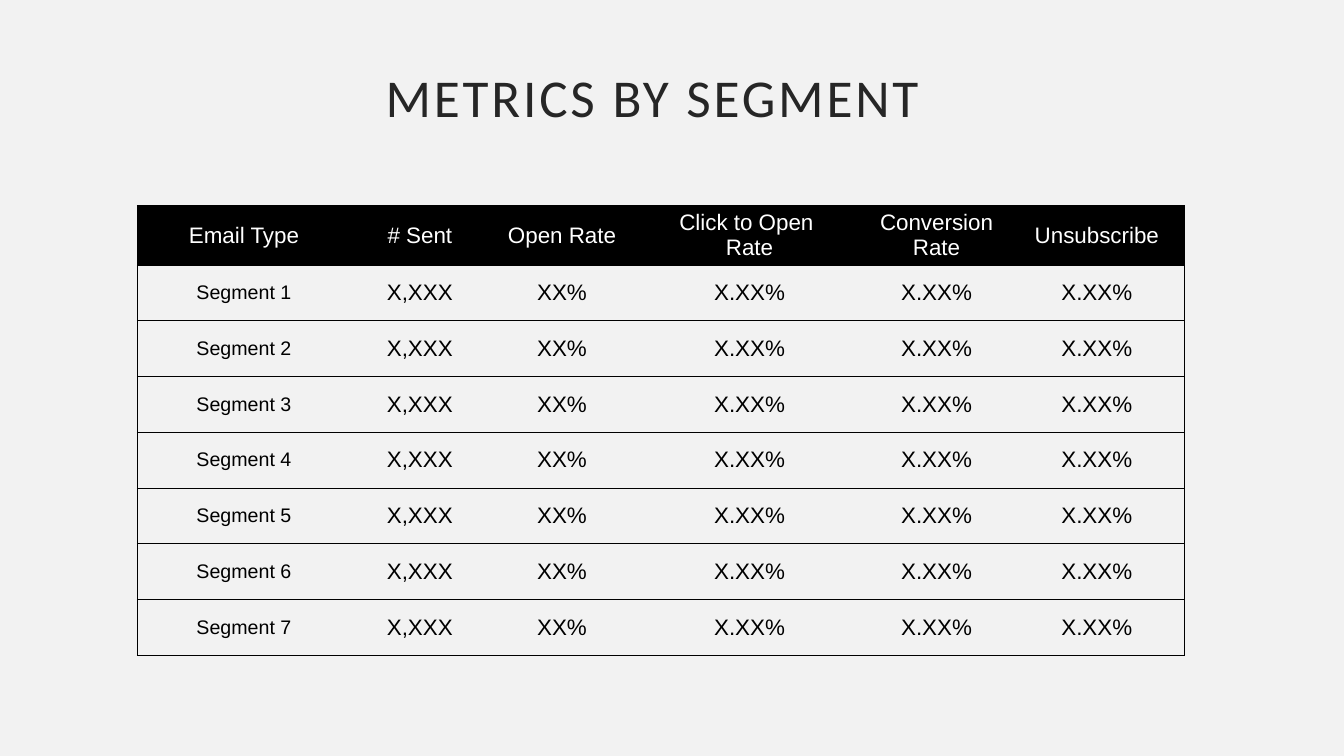
from dataclasses import dataclass

import lxml.etree
import pptx
import pptx.dml.color
import pptx.enum.text
import pptx.oxml.ns
import pptx.table
import pptx.util
from pptx.util import Inches

BACKGROUND = pptx.dml.color.RGBColor(0xF2, 0xF2, 0xF2)
TITLE_COLOR = pptx.dml.color.RGBColor(0x26, 0x26, 0x26)
BLACK = pptx.dml.color.RGBColor(0, 0, 0)
WHITE = pptx.dml.color.RGBColor(0xFF, 0xFF, 0xFF)

SEGMENT_COUNT = 7
TABLE_LEFT, TABLE_TOP = 1.36, 2.04
TABLE_HEIGHT, HEADER_HEIGHT = 4.46, 0.59
BORDER_WIDTH = pptx.util.Pt(0.5)


@dataclass(frozen=True)
class Column:
    heading: str
    value: str
    width: float
    value_size: int = 16


COLUMNS = [
    Column("Email Type", "Segment {number}", 2.12, 14),
    Column("# Sent", "X,XXX", 1.37),
    Column("Open Rate", "XX%", 1.45),
    Column("Click to Open \nRate", "X.XX%", 2.27),
    Column("Conversion Rate", "X.XX%", 1.44),
    Column("Unsubscribe", "X.XX%", 1.74),
]


def set_borders(cell: pptx.table._Cell, visible_sides: str) -> None:
    """Draw the sides named among L, R, T and B, and hide the others."""
    properties = cell._tc.get_or_add_tcPr()
    for side in "LRTB":
        line = lxml.etree.SubElement(
            properties, pptx.oxml.ns.qn(f"a:ln{side}"), w=str(BORDER_WIDTH)
        )
        if side in visible_sides:
            fill = lxml.etree.SubElement(line, pptx.oxml.ns.qn("a:solidFill"))
            lxml.etree.SubElement(fill, pptx.oxml.ns.qn("a:srgbClr"), val=str(BLACK))
        else:
            lxml.etree.SubElement(line, pptx.oxml.ns.qn("a:noFill"))


def fill_cell(
    cell: pptx.table._Cell, text: str, size: int, is_header: bool, sides: str
) -> None:
    cell.text = text
    cell.vertical_anchor = pptx.enum.text.MSO_ANCHOR.MIDDLE
    cell.margin_top = cell.margin_bottom = Inches(0.04)
    for paragraph in cell.text_frame.paragraphs:
        paragraph.alignment = pptx.enum.text.PP_ALIGN.CENTER
        paragraph.font.name = "Arial"
        paragraph.font.size = pptx.util.Pt(size)
        paragraph.font.bold = False
        paragraph.font.color.rgb = WHITE if is_header else BLACK
    set_borders(cell, sides)
    if is_header:
        cell.fill.solid()
        cell.fill.fore_color.rgb = BLACK
    else:
        cell.fill.background()


def add_title(slide: pptx.slide.Slide) -> None:
    title = slide.shapes.title
    title.left, title.top = Inches(0), Inches(0.63)
    title.width, title.height = Inches(12.94), Inches(0.7)
    frame = title.text_frame
    frame.text = "METRICS BY SEGMENT"
    frame.auto_size = pptx.enum.text.MSO_AUTO_SIZE.NONE
    frame.vertical_anchor = pptx.enum.text.MSO_ANCHOR.BOTTOM
    paragraph = frame.paragraphs[0]
    paragraph.alignment = pptx.enum.text.PP_ALIGN.CENTER
    paragraph.line_spacing = 0.9
    paragraph.font.name = "Calibri"
    paragraph.font.size = pptx.util.Pt(38)
    paragraph.font.color.rgb = TITLE_COLOR
    paragraph.runs[0]._r.get_or_add_rPr().set("spc", "200")


def add_metrics_table(slide: pptx.slide.Slide) -> None:
    table = slide.shapes.add_table(
        SEGMENT_COUNT + 1,
        len(COLUMNS),
        Inches(TABLE_LEFT),
        Inches(TABLE_TOP),
        Inches(sum(column.width for column in COLUMNS)),
        Inches(TABLE_HEIGHT),
    ).table
    table.horz_banding = False
    segment_height = (TABLE_HEIGHT - HEADER_HEIGHT) / SEGMENT_COUNT
    for row_index, row in enumerate(table.rows):
        is_header = row_index == 0
        row.height = Inches(HEADER_HEIGHT if is_header else segment_height)
        for column_index, column in enumerate(COLUMNS):
            sides = "TB"
            if column_index == 0:
                sides += "L"
            if column_index == len(COLUMNS) - 1:
                sides += "R"
            text = column.heading if is_header else column.value.format(number=row_index)
            size = 16 if is_header else column.value_size
            fill_cell(table.cell(row_index, column_index), text, size, is_header, sides)
    for table_column, column in zip(table.columns, COLUMNS):
        table_column.width = Inches(column.width)


def main() -> None:
    presentation = pptx.Presentation()
    presentation.slide_width = Inches(13.33)
    presentation.slide_height = Inches(7.5)
    slide = presentation.slides.add_slide(
        presentation.slide_layouts.get_by_name("Title Only")
    )
    slide.background.fill.solid()
    slide.background.fill.fore_color.rgb = BACKGROUND
    add_title(slide)
    add_metrics_table(slide)
    presentation.save("out.pptx")


if __name__ == "__main__":
    main()
